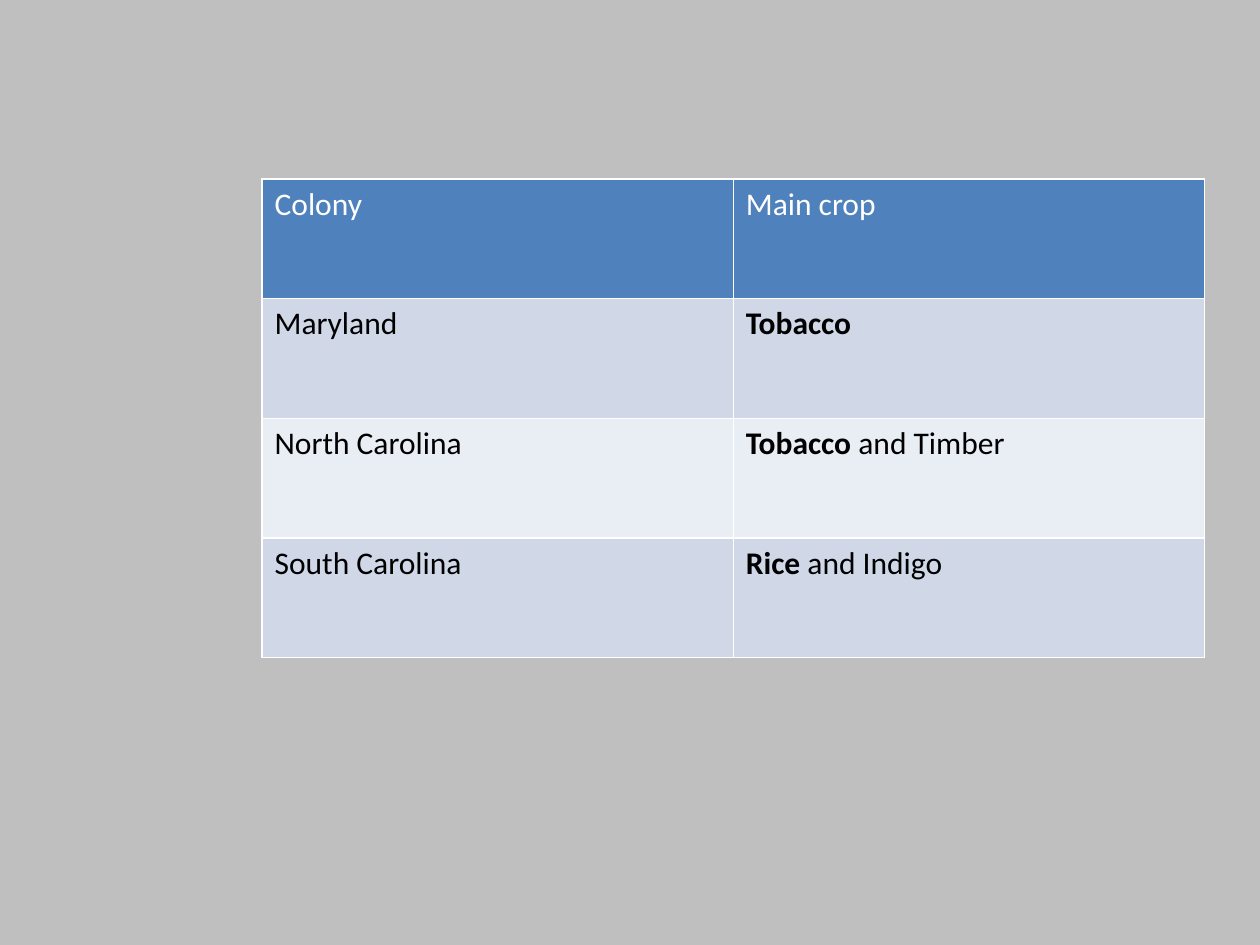
from dataclasses import dataclass

from pptx import Presentation
from pptx.dml.color import RGBColor
from pptx.slide import Slide
from pptx.table import _Cell
from pptx.util import Inches, Pt

BLANK_LAYOUT = 6


@dataclass(frozen=True)
class Theme:
    font: str = "Calibri"
    text_size: int = 18
    background: str = "BFBFBF"
    header_fill: str = "4F81BD"
    header_text: str = "FFFFFF"
    body_text: str = "000000"
    bands: tuple[str, str] = ("D0D8E8", "E9EDF4")


@dataclass(frozen=True)
class Colony:
    name: str
    staple: str
    other_crops: str = ""


THEME = Theme()
HEADINGS = ("Colony", "Main crop")
COLONIES = (
    Colony("Maryland", "Tobacco"),
    Colony("North Carolina", "Tobacco", " and Timber"),
    Colony("South Carolina", "Rice", " and Indigo"),
)
COLUMN_WIDTH = 3.74
ROW_HEIGHT = 0.95


def fill_cell(cell: _Cell, fill: str) -> None:
    cell.fill.solid()
    cell.fill.fore_color.rgb = RGBColor.from_string(fill)


def add_run(cell: _Cell, text: str, color: str, bold: bool = False) -> None:
    run = cell.text_frame.paragraphs[0].add_run()
    run.text = text
    run.font.name = THEME.font
    run.font.size = Pt(THEME.text_size)
    run.font.bold = bold
    run.font.color.rgb = RGBColor.from_string(color)


def add_crop_table(slide: Slide) -> None:
    """Add the colony table; its default style draws the white borders."""
    row_count, column_count = len(COLONIES) + 1, len(HEADINGS)
    table = slide.shapes.add_table(
        row_count, column_count, Inches(2.08), Inches(1.42),
        Inches(COLUMN_WIDTH * column_count), Inches(ROW_HEIGHT * row_count),
    ).table

    for column, heading in enumerate(HEADINGS):
        header = table.cell(0, column)
        fill_cell(header, THEME.header_fill)
        add_run(header, heading, THEME.header_text)

    for row, colony in enumerate(COLONIES, start=1):
        name_cell, crop_cell = table.cell(row, 0), table.cell(row, 1)
        for cell in (name_cell, crop_cell):
            fill_cell(cell, THEME.bands[(row - 1) % len(THEME.bands)])
        add_run(name_cell, colony.name, THEME.body_text)
        add_run(crop_cell, colony.staple, THEME.body_text, bold=True)
        if colony.other_crops:
            add_run(crop_cell, colony.other_crops, THEME.body_text)


def main() -> None:
    presentation = Presentation()
    presentation.slide_width = Inches(10)
    presentation.slide_height = Inches(7.5)
    slide = presentation.slides.add_slide(presentation.slide_layouts[BLANK_LAYOUT])
    background = slide.background.fill
    background.solid()
    background.fore_color.rgb = RGBColor.from_string(THEME.background)
    add_crop_table(slide)
    presentation.save("out.pptx")


if __name__ == "__main__":
    main()
